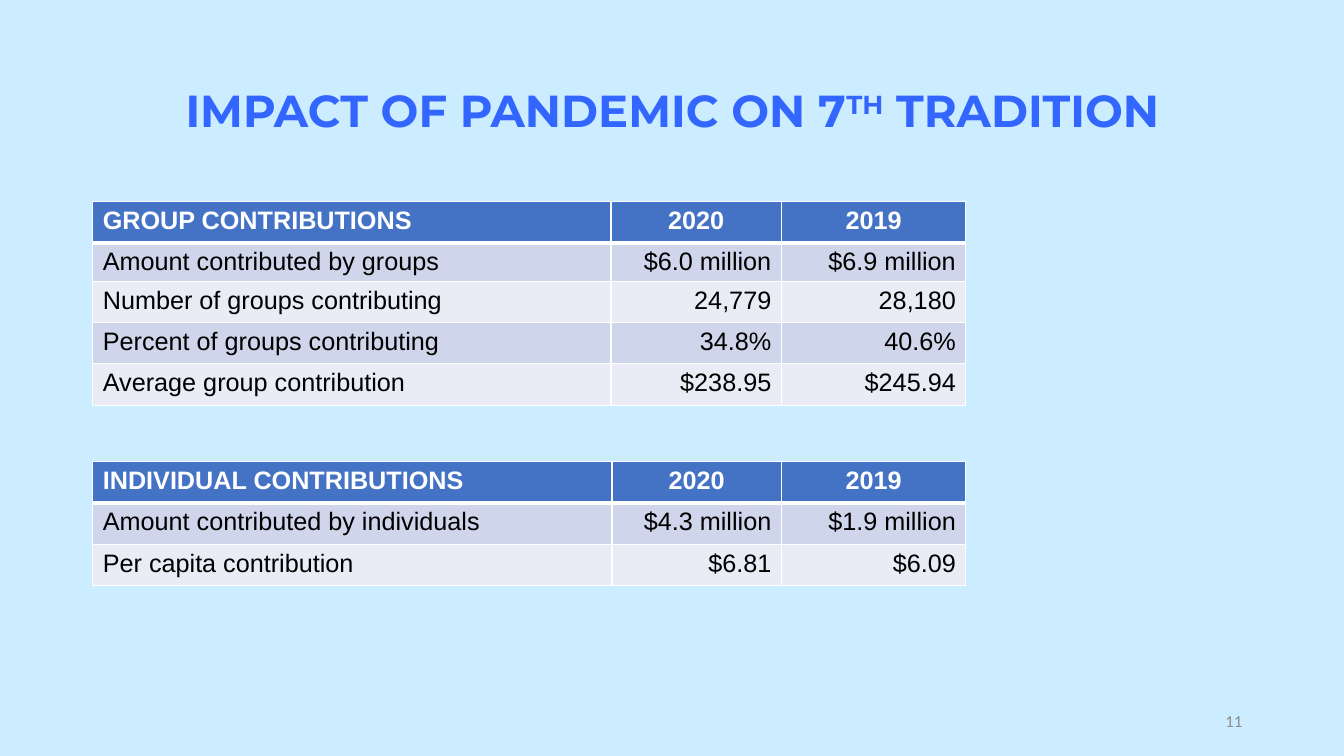
from lxml import etree
from pptx import Presentation
from pptx.dml.color import RGBColor
from pptx.enum.text import MSO_ANCHOR, PP_ALIGN
from pptx.oxml.ns import qn
from pptx.util import Inches, Pt

TITLE = [("IMPACT OF PANDEMIC ON 7", 0), ("TH", 30000), (" TRADITION", 0)]
PAGE_NUMBER = "11"
TABLES = [
    {
        "top": 2,
        "cols": [5.14, 1.69, 1.83],
        "heights": [0.41, 0.38, 0.41, 0.41, 0.41],
        "rows": [
            ("GROUP CONTRIBUTIONS", "2020", "2019"),
            ("Amount contributed by groups", "$6.0 million", "$6.9 million"),
            ("Number of groups contributing", "24,779", "28,180"),
            ("Percent of groups contributing", "34.8%", "40.6%"),
            ("Average group contribution", "$238.95", "$245.94"),
        ],
    },
    {
        "top": 4.58,
        "cols": [5.15, 1.68, 1.83],
        "heights": [0.41, 0.41, 0.41],
        "rows": [
            ("INDIVIDUAL CONTRIBUTIONS", "2020", "2019"),
            ("Amount contributed by individuals", "$4.3 million", "$1.9 million"),
            ("Per capita contribution", "$6.81", "$6.09"),
        ],
    },
]
COLORS = {
    "background": "CCECFF",
    "title": "3366FF",
    "header": "4472C4",
    "odd": "CFD5EA",
    "even": "E9EBF5",
    "white": "FFFFFF",
    "black": "000000",
    "number": "8C8C8C",
}
LEFT = 0.92
TITLE_FONT = {"name": "Montserrat", "size": Pt(32), "bold": True}
TABLE_FONT = {"name": "Arial", "size": Pt(18)}
NUMBER_FONT = {"name": "Calibri", "size": Pt(12)}


def rgb(name):
    return RGBColor.from_string(COLORS[name])


def add_run(p, text, font, color):
    r = p.add_run()
    r.text = text
    for key, value in font.items():
        setattr(r.font, key, value)
    r.font.color.rgb = rgb(color)
    return r


def set_borders(cell, top, bottom):
    """Draw white cell borders; top and bottom are widths in points."""
    tcPr = cell._tc.get_or_add_tcPr()
    widths = {"a:lnL": 1, "a:lnR": 1, "a:lnT": top, "a:lnB": bottom}
    for i, (tag, width) in enumerate(widths.items()):
        ln = etree.Element(qn(tag), w=str(Pt(width)))
        fill = etree.SubElement(ln, qn("a:solidFill"))
        etree.SubElement(fill, qn("a:srgbClr"), val=COLORS["white"])
        tcPr.insert(i, ln)


def add_title(s):
    sp = s.shapes.title
    sp.left, sp.top, sp.width, sp.height = map(Inches, (LEFT, 0.4, 11.5, 1.45))
    tf = sp.text_frame
    tf.vertical_anchor = MSO_ANCHOR.MIDDLE
    p = tf.paragraphs[0]
    p.alignment = PP_ALIGN.CENTER
    p.line_spacing = 0.9
    for text, baseline in TITLE:
        r = add_run(p, text, TITLE_FONT, "title")
        if baseline:
            r._r.get_or_add_rPr().set("baseline", str(baseline))


def fill_cell(cell, text, row, col):
    header = row == 0
    cell.fill.solid()
    cell.fill.fore_color.rgb = rgb("header" if header else "odd" if row % 2 else "even")
    p = cell.text_frame.paragraphs[0]
    if col == 0:
        p.alignment = PP_ALIGN.LEFT
    else:
        p.alignment = PP_ALIGN.CENTER if header else PP_ALIGN.RIGHT
    add_run(p, text, {**TABLE_FONT, "bold": header}, "white" if header else "black")
    set_borders(cell, top=3 if row == 1 else 1, bottom=3 if header else 1)


def add_contributions(s, top, cols, heights, rows):
    frame = s.shapes.add_table(len(rows), len(cols), Inches(LEFT), Inches(top),
                               Inches(sum(cols)), Inches(sum(heights)))
    table = frame.table
    for column, width in zip(table.columns, cols):
        column.width = Inches(width)
    for row, height in zip(table.rows, heights):
        row.height = Inches(height)
    for i, texts in enumerate(rows):
        for j, text in enumerate(texts):
            fill_cell(table.cell(i, j), text, i, j)


def add_page_number(s):
    sp = s.shapes.add_textbox(*map(Inches, (9.42, 6.95, 3, 0.4)))
    tf = sp.text_frame
    tf.word_wrap = True
    tf.vertical_anchor = MSO_ANCHOR.MIDDLE
    p = tf.paragraphs[0]
    p.alignment = PP_ALIGN.RIGHT
    add_run(p, PAGE_NUMBER, NUMBER_FONT, "number")


def main():
    prs = Presentation()
    prs.slide_width, prs.slide_height = Inches(13.33), Inches(7.5)
    s = prs.slides.add_slide(prs.slide_layouts[5])
    s.background.fill.solid()
    s.background.fill.fore_color.rgb = rgb("background")
    add_title(s)
    for table in TABLES:
        add_contributions(s, **table)
    add_page_number(s)
    prs.save("out.pptx")


if __name__ == "__main__":
    main()
